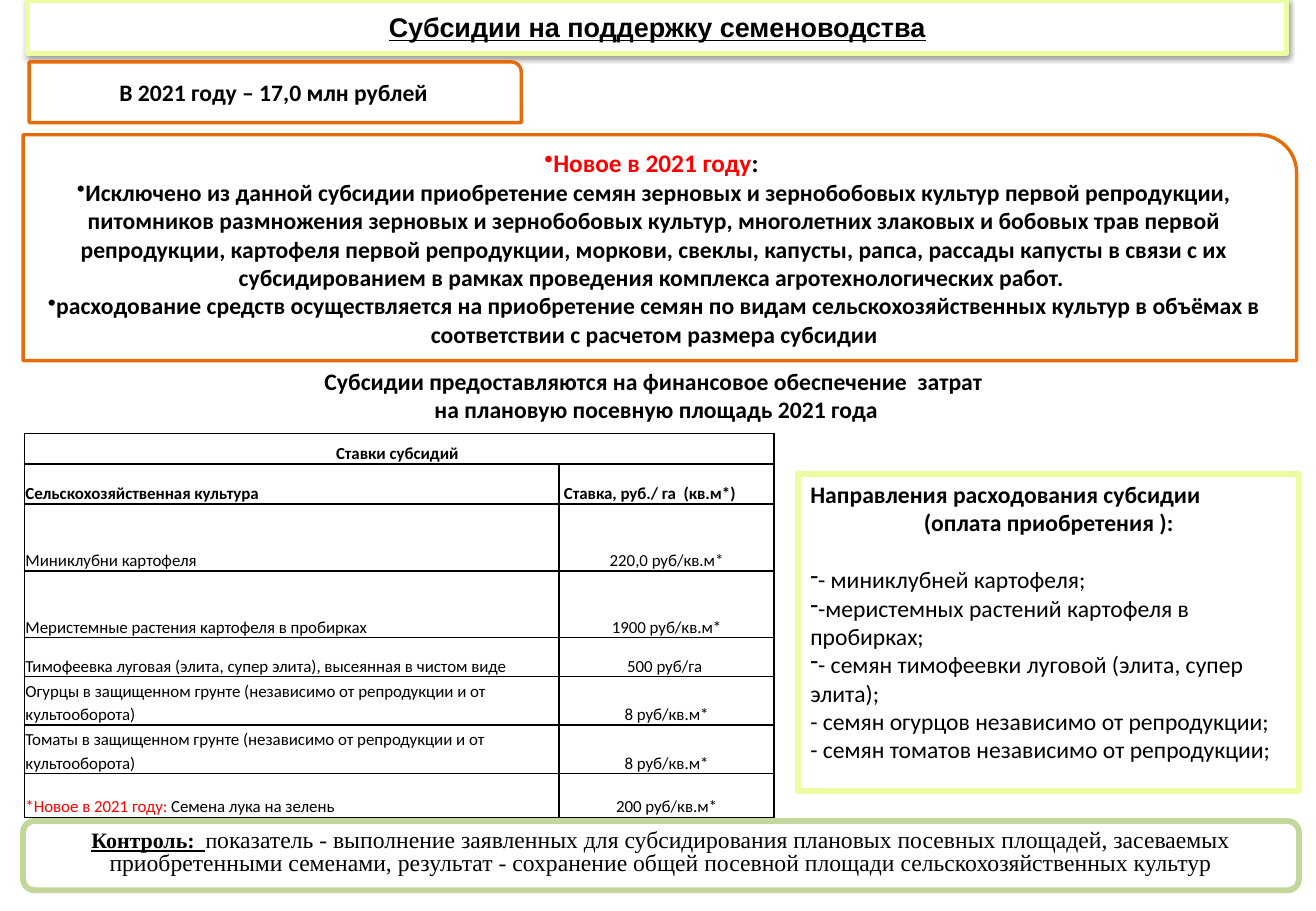
from dataclasses import dataclass
from typing import Any

from lxml.etree import SubElement
from pptx import Presentation
from pptx.dml.color import RGBColor
from pptx.enum.shapes import MSO_SHAPE
from pptx.enum.text import MSO_ANCHOR, PP_ALIGN
from pptx.oxml.ns import qn
from pptx.util import Inches, Pt

HUES = {"black": "000000", "white": "FFFFFF", "red": "FF0000",
        "lime": "EBFDA1", "orange": "E46C0A", "green": "C3D69B"}
LEFT, MID = PP_ALIGN.LEFT, PP_ALIGN.CENTER
TOP, CENTER = MSO_ANCHOR.TOP, MSO_ANCHOR.MIDDLE


@dataclass
class Run:
    text: str
    hue: str = "black"
    bold: bool | None = None
    line: bool | None = None
    size: float | None = None


@dataclass
class Para:
    runs: list[Run]
    size: float = 14
    bold: bool = True
    align: Any = MID
    mark: str = ""
    after: float = 0
    pitch: float = 1
    face: str = "Calibri"


@dataclass
class Box:
    kind: Any
    area: tuple[float, float, float, float]
    edge: str
    width: float
    anchor: Any
    paras: list[Para]
    curve: float = 0.167


@dataclass
class Row:
    height: float
    crop: list[Run]
    rate: str
    bold: bool = False
    side: Any = MID


def color(name: str) -> RGBColor:
    return RGBColor.from_string(HUES[name])


def write(frame: Any, paras: list[Para]) -> None:
    frame.word_wrap = True
    for index, para in enumerate(paras):
        item = frame.add_paragraph() if index else frame.paragraphs[0]
        item.alignment = para.align
        item.line_spacing = para.pitch
        item.space_before = Pt(0)
        item.space_after = Pt(para.after)
        item.font.size = Pt(para.size)
        item.font.name = para.face
        item.font.bold = para.bold
        if para.mark:
            props = item._p.get_or_add_pPr()
            props.set("marL", "0")
            props.set("indent", "0")
            bullet = props.makeelement(qn("a:buChar"), {"char": para.mark})
            props.find(qn("a:defRPr")).addprevious(bullet)
        for part in para.runs:
            run = item.add_run()
            run.text = part.text
            run.font.color.rgb = color(part.hue)
            if part.bold is not None:
                run.font.bold = part.bold
            if part.line is not None:
                run.font.underline = part.line
            if part.size:
                run.font.size = Pt(part.size)


def paint(shape: Any, edge: str, width: float) -> None:
    shape.fill.solid()
    shape.fill.fore_color.rgb = color("white")
    shape.line.color.rgb = color(edge)
    shape.line.width = Pt(width)


def place(shape: Any, area: tuple[float, float, float, float]) -> None:
    shape.left, shape.top, shape.width, shape.height = map(Inches, area)


def draw_title(title: Any) -> None:
    place(title, (0.23, 0, 10.36, 0.44))
    props = title._element.spPr
    shape = SubElement(props, qn("a:prstGeom"), prst="roundRect")
    guides = SubElement(shape, qn("a:avLst"))
    SubElement(guides, qn("a:gd"), name="adj", fmla="val 35100")
    paint(title, "lime", 3)
    effect = SubElement(props, qn("a:effectLst"))
    shade = SubElement(effect, qn("a:outerShdw"), blurRad=str(Pt(3.1)), dist=str(Pt(1.6)),
                       dir="5400000", rotWithShape="0")
    tone = SubElement(shade, qn("a:srgbClr"), val=HUES["black"])
    SubElement(tone, qn("a:alpha"), val="38000")
    title.text_frame.vertical_anchor = CENTER
    write(title.text_frame, [Para([Run("Субсидии на поддержку семеноводства", line=True)],
                                  16, face="Arial")])


def draw_box(shapes: Any, box: Box) -> None:
    shape = shapes.add_shape(box.kind, *map(Inches, box.area))
    shape.shadow.inherit = False
    if len(shape.adjustments):
        shape.adjustments[0] = box.curve
    paint(shape, box.edge, box.width)
    shape.text_frame.vertical_anchor = box.anchor
    write(shape.text_frame, box.paras)


def fill_cell(cell: Any, para: Para) -> None:
    cell.margin_left = cell.margin_right = cell.margin_top = Inches(0.01)
    cell.margin_bottom = 0
    cell.vertical_anchor = MSO_ANCHOR.BOTTOM
    props = cell._tc.get_or_add_tcPr()
    for side in ("lnL", "lnR", "lnT", "lnB"):
        line = SubElement(props, qn(f"a:{side}"), w=str(Pt(1)))
        solid = SubElement(line, qn("a:solidFill"))
        SubElement(solid, qn("a:srgbClr"), val=HUES["black"])
    cell.fill.background()
    write(cell.text_frame, [para])


def draw_table(shapes: Any, rows: list[Row]) -> None:
    table = shapes.add_table(len(rows), 2, Inches(0.2), Inches(3.57), Inches(6.17),
                             Inches(sum(row.height for row in rows))).table
    table.first_row = table.horz_banding = False
    table.columns[0].width, table.columns[1].width = Inches(4.4), Inches(1.77)
    for index, row in enumerate(rows):
        table.rows[index].height = Inches(row.height)
        head = LEFT if row.rate else MID
        fill_cell(table.cell(index, 0), Para(row.crop, 10, row.bold, head, pitch=1.15))
        rate = [Run(row.rate)] if row.rate else []
        fill_cell(table.cell(index, 1), Para(rate, 10, row.bold, row.side, pitch=1.15))
    table.cell(0, 0).merge(table.cell(0, 1))


NEWS = [
    Para([Run("Новое в 2021 году", "red"), Run(": ")], 15, mark="•"),
    Para([Run("Исключено из данной субсидии приобретение семян зерновых и зернобобовых культур первой репродукции, питомников размножения зерновых и зернобобовых культур, многолетних злаковых и бобовых трав первой репродукции, картофеля первой репродукции, моркови, свеклы, капусты, рапса, рассады капусты в связи с их субсидированием в рамках проведения комплекса агротехнологических работ. ")], mark="•"),
    Para([Run("расходование средств осуществляется на приобретение семян по видам сельскохозяйственных культур в объёмах в соответствии с расчетом размера субсидии")], mark="•"),
]
GOALS = [
    Para([Run("Направления расходования субсидии")], align=LEFT),
    Para([Run("(оплата приобретения ):")], after=17),
    *[Para([Run(text)], bold=False, align=LEFT, mark=mark) for mark, text in (
        ("-", "- миниклубней картофеля;"),
        ("-", "-меристемных растений картофеля в пробирках;"),
        ("-", "- семян тимофеевки луговой (элита, супер элита);"),
        ("", "- семян огурцов независимо от репродукции;"),
        ("", "- семян томатов независимо от репродукции;"))],
]
CHECK = [Para([
    Run("Контроль:  ", bold=True, line=True, size=13), Run("п", size=13),
    Run("оказатель - выполнение заявленных для субсидирования плановых посевных площадей, засеваемых приобретенными семенами, результат - сохранение общей посевной площади сельскохозяйственных культур"),
], bold=False, pitch=0.8, face="Times New Roman")]
BOXES = [
    Box(MSO_SHAPE.RECTANGLE, (6.57, 3.9, 4.12, 2.61), "lime", 3.5, TOP, GOALS),
    Box(MSO_SHAPE.ROUNDED_RECTANGLE, (0.19, 6.76, 10.5, 0.57), "green", 3.5, TOP, CHECK),
    Box(MSO_SHAPE.ROUND_1_RECTANGLE, (0.24, 0.51, 4.05, 0.5), "orange", 2, CENTER,
        [Para([Run("В 2021 году – 17,0 млн рублей")])]),
    Box(MSO_SHAPE.ROUND_1_RECTANGLE, (0.19, 1.11, 10.48, 1.86), "orange", 2, CENTER, NEWS),
]
RATES = [
    Row(0.25, [Run("Ставки субсидий ")], "", True),
    Row(0.33, [Run("Сельскохозяйственная культура")], " Ставка, руб./ га  (кв.м*)", True, LEFT),
    Row(0.55, [Run("Миниклубни картофеля")], "220,0 руб/кв.м*"),
    Row(0.55, [Run("Меристемные растения картофеля в пробирках")], "1900 руб/кв.м*"),
    Row(0.32, [Run("Тимофеевка луговая (элита, супер элита), высеянная в чистом виде")], "500 руб/га "),
    *[Row(0.4, [Run(f"{crop} в защищенном грунте (независимо от репродукции и от культооборота)")],
          "8 руб/кв.м*") for crop in ("Огурцы", "Томаты")],
    Row(0.36, [Run("*Новое в 2021 году: ", "red"), Run("Семена лука на зелень")], "200 руб/кв.м*"),
]


def main() -> None:
    deck = Presentation()
    deck.slide_width, deck.slide_height = Inches(10.83), Inches(7.5)
    shapes = deck.slides.add_slide(deck.slide_layouts[5]).shapes
    draw_title(shapes.title)
    note = shapes.add_textbox(*map(Inches, (1.76, 2.97, 7.24, 0.63)))
    write(note.text_frame, [
        Para([Run("Субсидии предоставляются на финансовое обеспечение  затрат")]),
        Para([Run(" на плановую посевную площадь 2021 года")])])
    for box in BOXES:
        draw_box(shapes, box)
    draw_table(shapes, RATES)
    deck.save("out.pptx")


if __name__ == "__main__":
    main()
